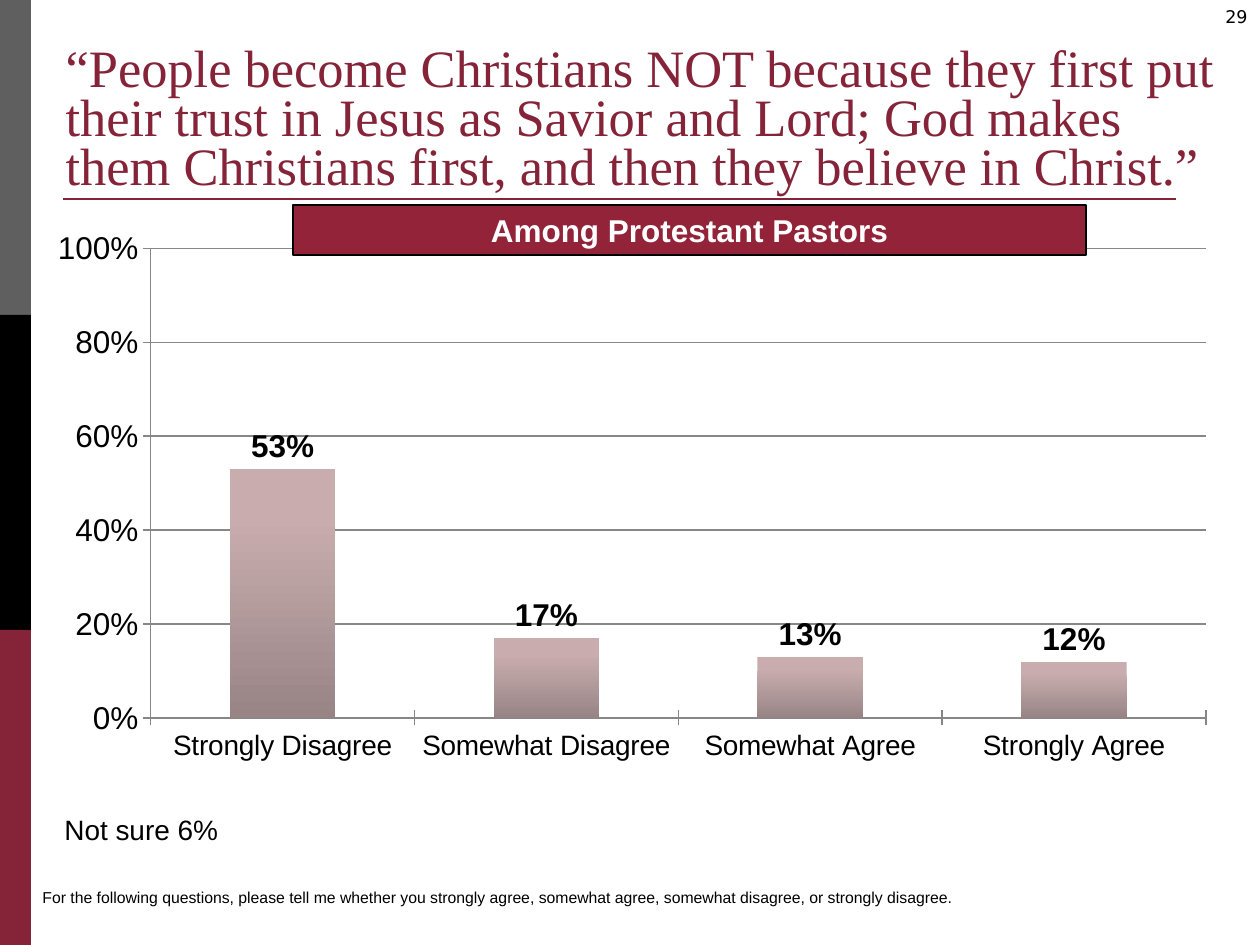
from lxml import etree
from pptx import Presentation
from pptx.chart.data import CategoryChartData
from pptx.dml.color import RGBColor
from pptx.enum.chart import XL_CHART_TYPE, XL_LABEL_POSITION, XL_TICK_MARK
from pptx.enum.shapes import MSO_CONNECTOR, MSO_SHAPE
from pptx.enum.text import MSO_ANCHOR, MSO_AUTO_SIZE, PP_ALIGN
from pptx.oxml import parse_xml
from pptx.oxml.ns import nsdecls, qn
from pptx.util import Pt

COLUMN = XL_CHART_TYPE.COLUMN_CLUSTERED
OUTSIDE = XL_LABEL_POSITION.OUTSIDE_END
CROSS, NO_TICK = XL_TICK_MARK.CROSS, XL_TICK_MARK.NONE
RECT, STRAIGHT = MSO_SHAPE.RECTANGLE, MSO_CONNECTOR.STRAIGHT
TOP, MIDDLE, BOTTOM = MSO_ANCHOR.TOP, MSO_ANCHOR.MIDDLE, MSO_ANCHOR.BOTTOM
LEFT, CENTER, RIGHT = PP_ALIGN.LEFT, PP_ALIGN.CENTER, PP_ALIGN.RIGHT

BLACK = RGBColor(0x00, 0x00, 0x00)
WHITE = RGBColor(0xFF, 0xFF, 0xFF)
GRAY = RGBColor(0x5F, 0x5F, 0x5F)
WINE = RGBColor(0x85, 0x23, 0x38)
BANNER = RGBColor(0x92, 0x23, 0x39)
GRID = RGBColor(0x87, 0x87, 0x87)
ROSE = RGBColor(0xC9, 0xAD, 0xAE)
DUSK = RGBColor(0x98, 0x84, 0x85)

TITLE = ("“People become Christians NOT because they first put their trust in "
         "Jesus as Savior and Lord; God makes them Christians first, and then "
         "they believe in Christ.”")
GROUP = "Among Protestant Pastors"
ANSWERS = {"Strongly Disagree": 0.53, "Somewhat Disagree": 0.17,
           "Somewhat Agree": 0.13, "Strongly Agree": 0.12}
# text, box in px, size, font, alignment
NOTES = [
    ("29", (1197, 0, 63, 42), 10, "DejaVu Sans", RIGHT),
    ("For the following questions, please tell me whether you strongly agree, "
     "somewhat agree, somewhat disagree, or strongly disagree.",
     (30, 882, 965, 32), 9, "Arial", LEFT),
    ("Not sure 6%", (52, 806, 222, 47), 16, "Arial", LEFT),
]
BANDS = [GRAY, BLACK, WINE]
PLOT = {"x": 0.095, "y": 0.054, "w": 0.889, "h": 0.807}
WIDE, HIGH = 1260, 945


def px(*vals):
    return [round(v * 914400 / 126) for v in vals]


def style(font, size, color=BLACK, name="Arial", bold=False):
    font.size, font.name, font.bold = Pt(size), name, bold
    font.color.rgb = color


def write(shape, text, size, color, name, align, anchor, bold=False):
    frame = shape.text_frame
    frame.text = text
    frame.word_wrap = True
    frame.auto_size = MSO_AUTO_SIZE.NONE
    frame.vertical_anchor = anchor
    para = frame.paragraphs[0]
    para.alignment = align
    style(para.runs[0].font, size, color, name, bold)
    return para


def add_rect(box, fill, edge=None):
    rect = slide.shapes.add_shape(RECT, *px(*box))
    rect.shadow.inherit = False
    rect.fill.solid()
    rect.fill.fore_color.rgb = fill
    if edge is None:
        rect.line.fill.background()
    else:
        rect.line.color.rgb = edge
        rect.line.width = Pt(1.5)
    return rect


def set_plot(chart):
    """Fix the inner plot area at the fractions in PLOT."""
    area = chart._chartSpace.chart.plotArea
    for old in area.findall(qn("c:layout")):
        area.remove(old)
    layout = parse_xml(f"<c:layout {nsdecls('c')}><c:manualLayout/></c:layout>")
    marks = [("layoutTarget", "inner"), ("xMode", "edge"), ("yMode", "edge")]
    for tag, val in marks + list(PLOT.items()):
        etree.SubElement(layout[0], qn(f"c:{tag}")).set("val", str(val))
    area.insert(0, layout)


def add_chart(box):
    data = CategoryChartData(number_format="0%")
    data.categories = list(ANSWERS)
    data.add_series("Series 1", list(ANSWERS.values()))
    chart = slide.shapes.add_chart(COLUMN, *px(*box), data).chart
    chart.has_legend = chart.has_title = False
    style(chart.font, 18)
    set_plot(chart)

    for axis, size in ((chart.category_axis, 16), (chart.value_axis, 18)):
        style(axis.tick_labels.font, size)
        axis.major_tick_mark, axis.minor_tick_mark = CROSS, NO_TICK
        axis.format.line.color.rgb = GRID
    axis = chart.value_axis
    axis.minimum_scale, axis.maximum_scale, axis.major_unit = 0, 1, 0.2
    axis.tick_labels.number_format = "0%"
    axis.tick_labels.number_format_is_linked = False
    axis.has_major_gridlines = True
    axis.major_gridlines.format.line.color.rgb = GRID

    plot = chart.plots[0]
    plot.gap_width, plot.vary_by_categories = 150, False
    bars = plot.series[0]
    fill = bars.format.fill
    fill.gradient()
    fill.gradient_angle = 270
    for stop, color, pos in zip(fill.gradient_stops, (ROSE, DUSK), (0.2, 1)):
        stop.color.rgb, stop.position = color, pos
    labels = bars.data_labels
    labels.show_value, labels.position = True, OUTSIDE
    labels.number_format, labels.number_format_is_linked = "0%", False
    style(labels.font, 18, bold=True)


deck = Presentation()
deck.slide_width, deck.slide_height = px(WIDE, HIGH)
slide = deck.slides.add_slide(deck.slide_layouts[5])

step = HIGH // len(BANDS)
for row, color in enumerate(BANDS):
    add_rect((0, row * step, 31, step), color)

rule = slide.shapes.add_connector(STRAIGHT, *px(63, 199, 1176, 199))
rule.line.color.rgb, rule.line.width = WINE, Pt(1.5)
etree.SubElement(rule._element.spPr, qn("a:effectLst"))

title = slide.shapes.title
title.left, title.top, title.width, title.height = px(53, 18, 1180, 184)
para = write(title, TITLE, 30, WINE, "Times New Roman", LEFT, BOTTOM)
para.line_spacing = Pt(28)

add_chart((38, 217, 1187, 582))
for text, box, size, name, align in NOTES:
    write(slide.shapes.add_textbox(*px(*box)), text, size, BLACK, name, align, TOP)
banner = add_rect((293, 205, 793, 50), BANNER, BLACK)
write(banner, GROUP, 18, WHITE, "Arial", CENTER, MIDDLE, bold=True)

deck.save("out.pptx")
